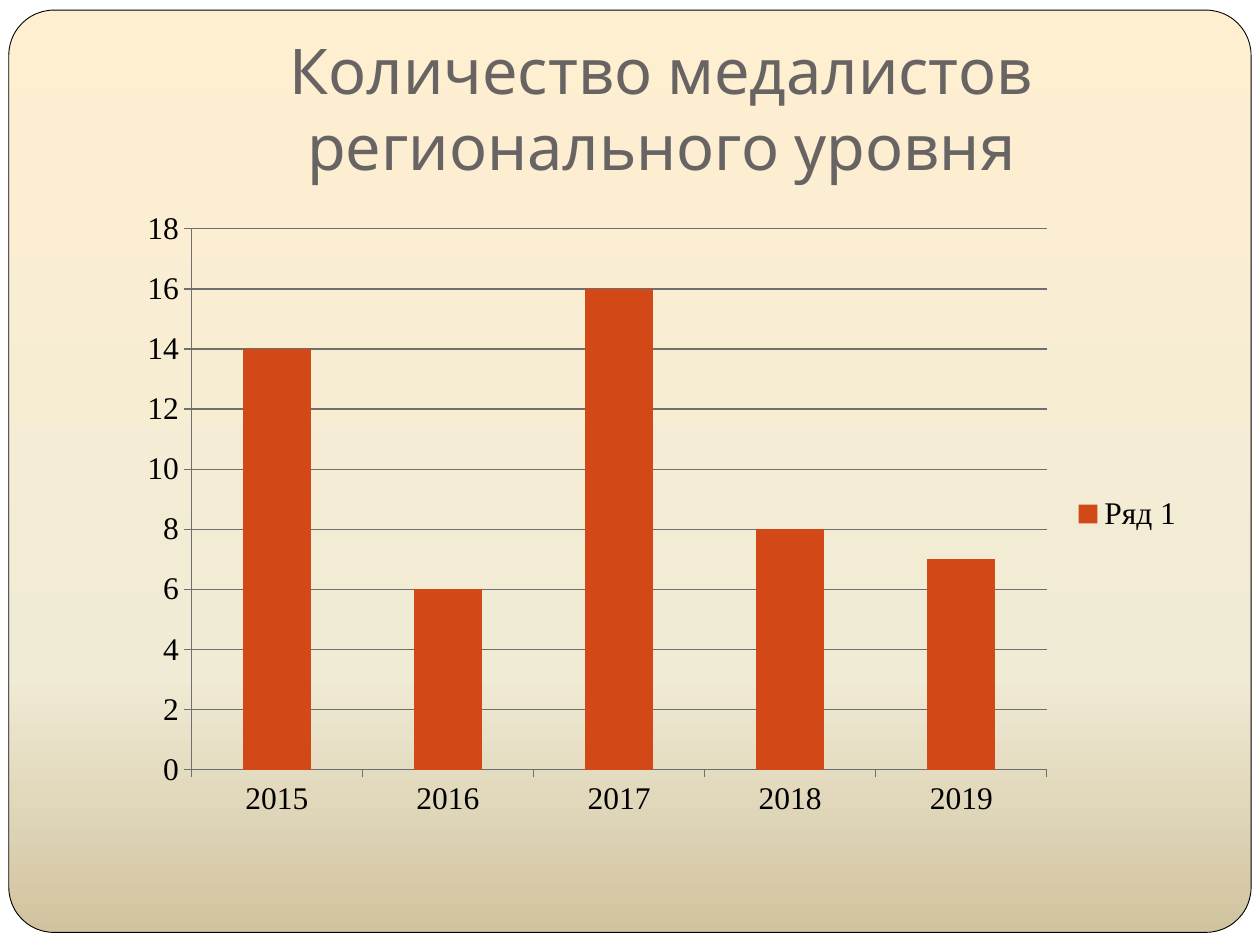
from lxml import etree
from pptx import Presentation
from pptx.chart.data import CategoryChartData as Data
from pptx.dml.color import RGBColor
from pptx.enum.chart import XL_CHART_TYPE as Kind, XL_LEGEND_POSITION as Side, XL_TICK_MARK as Tick
from pptx.enum.shapes import MSO_SHAPE as Form
from pptx.enum.text import MSO_ANCHOR as Anchor, PP_ALIGN as Align
from pptx.oxml.ns import qn
from pptx.util import Inches, Pt

STOPS = [(0, "FFEFD1"), (72, "F0EBD5"), (100, "D1C39F")]
MEDALS = {"2015": 14, "2016": 6, "2017": 16, "2018": 8, "2019": 7}


def rgb(code):
    return RGBColor.from_string(code)


def fade(shape, stops):
    """Fill the shape from top to bottom with (percent, colour) stops."""
    shape.fill.gradient()
    grad = shape._element.spPr.find(qn("a:gradFill"))
    row = grad.find(qn("a:gsLst"))
    for old in list(row):
        row.remove(old)
    for spot, code in stops:
        stop = etree.SubElement(row, qn("a:gs"), pos=str(spot * 1000))
        etree.SubElement(stop, qn("a:srgbClr"), val=code)
    grad.find(qn("a:lin")).set("ang", "5400000")


def add_panel(slide, box):
    """Place a white sheet and, inset on it, the rounded gradient card."""
    left, top, width, height = box
    sheet = slide.shapes.add_shape(Form.RECTANGLE, *box)
    sheet.shadow.inherit = False
    sheet.fill.solid()
    sheet.fill.fore_color.rgb = rgb("FFFFFF")
    sheet.line.fill.background()

    card = slide.shapes.add_shape(
        Form.ROUNDED_RECTANGLE, left + Inches(0.07), top + Inches(0.08),
        width - Inches(0.14), height - Inches(0.18))
    card.shadow.inherit = False
    card.adjustments[0] = 0.049
    fade(card, STOPS)
    card.line.color.rgb = rgb("000000")
    card.line.width = Pt(0.5)


def add_title(slide, box, text):
    frame = slide.shapes.add_textbox(*box).text_frame
    frame.word_wrap = True
    frame.vertical_anchor = Anchor.BOTTOM
    frame.margin_bottom = Inches(0.1)
    para = frame.paragraphs[0]
    para.text = text
    para.alignment = Align.CENTER
    font = para.font
    font.name, font.size = "Karla", Pt(36)
    font.color.rgb = rgb("696464")


def add_medals(slide, box):
    data = Data()
    data.categories = list(MEDALS)
    data.add_series("Ряд 1", list(MEDALS.values()))
    chart = slide.shapes.add_chart(Kind.COLUMN_CLUSTERED, *box, data).chart
    chart.has_title = False
    chart.font.name, chart.font.size = "Times New Roman", Pt(18)
    chart.font.color.rgb = rgb("000000")

    chart.has_legend = True
    chart.legend.position = Side.RIGHT
    chart.legend.include_in_layout = False

    years, scale = chart.category_axis, chart.value_axis
    scale.minimum_scale, scale.maximum_scale, scale.major_unit = 0, 18, 2
    scale.has_major_gridlines = True
    for axis in (years, scale):
        axis.major_tick_mark = Tick.OUTSIDE
        axis.minor_tick_mark = Tick.NONE
    for part in (years, scale, scale.major_gridlines):
        part.format.line.color.rgb = rgb("6F6F6F")
        part.format.line.width = Pt(0.75)

    plot = chart.plots[0]
    plot.gap_width = 150
    plot.vary_by_categories = False
    fill = plot.series[0].format.fill
    fill.solid()
    fill.fore_color.rgb = rgb("D34817")


def main():
    deck = Presentation()
    deck.slide_width, deck.slide_height = Inches(10), Inches(7.5)
    slide = deck.slides.add_slide(deck.slide_layouts[6])
    left, width = Inches(1), Inches(8.5)
    add_panel(slide, (0, 0, deck.slide_width, deck.slide_height))
    add_title(slide, (left, Inches(0.3), width, Inches(1.25)),
              "Количество медалистов регионального уровня")
    add_medals(slide, (left, Inches(1.58), width, Inches(5)))
    deck.save("out.pptx")


if __name__ == "__main__":
    main()
